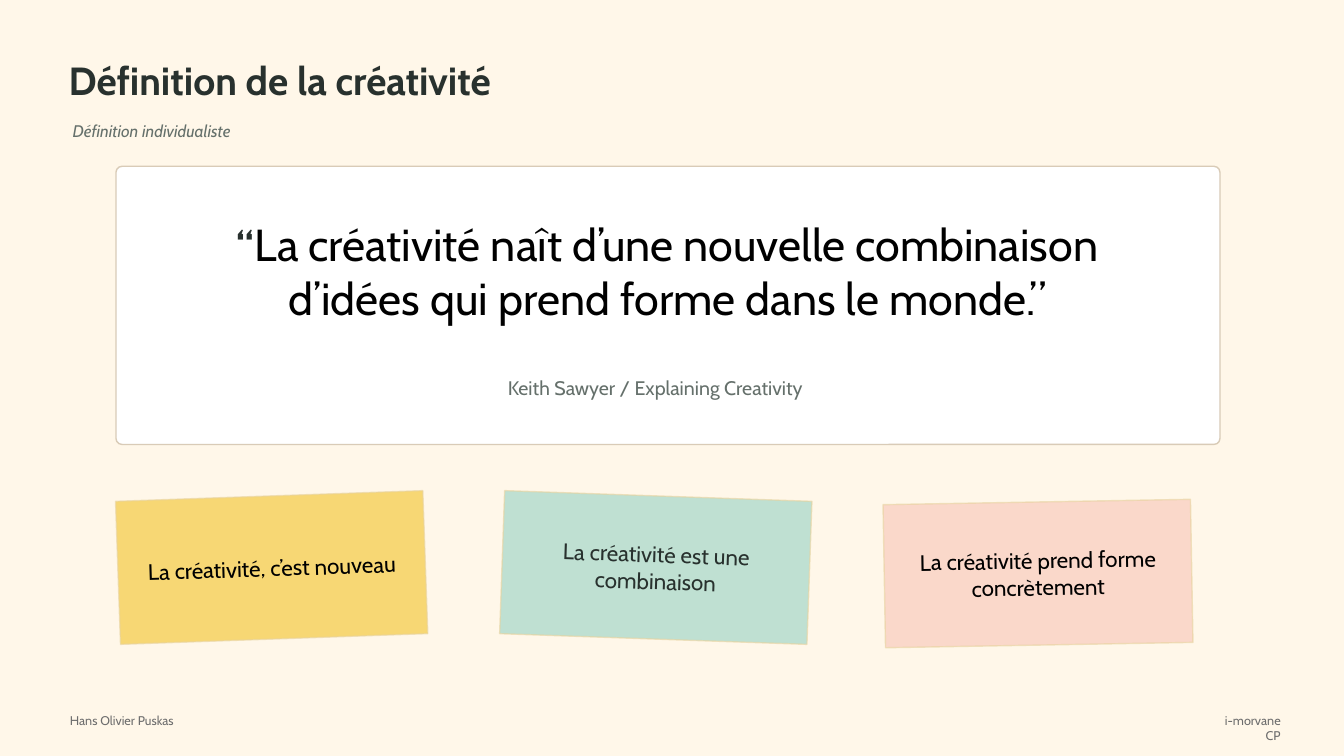
from dataclasses import dataclass

from lxml import etree
from pptx import Presentation
from pptx.dml.color import RGBColor
from pptx.enum.shapes import MSO_SHAPE
from pptx.enum.text import MSO_ANCHOR, MSO_AUTO_SIZE, PP_ALIGN
from pptx.oxml.ns import qn
from pptx.shapes.autoshape import Shape
from pptx.slide import Slide
from pptx.util import Inches, Pt

LEFT, CENTER, RIGHT = PP_ALIGN.LEFT, PP_ALIGN.CENTER, PP_ALIGN.RIGHT
MIDDLE = MSO_ANCHOR.MIDDLE
FIT = MSO_AUTO_SIZE.SHAPE_TO_FIT_TEXT
RECT, ROUND = MSO_SHAPE.RECTANGLE, MSO_SHAPE.ROUNDED_RECTANGLE


@dataclass(frozen=True)
class Theme:
    font: str = "Cabin"
    page: str = "FFF7E9"
    ink: str = "28312E"
    muted: str = "65706B"
    gray: str = "6E6E6E"
    black: str = "000000"
    white: str = "FFFFFF"
    border: str = "D7C9B4"
    edge: str = "E8D39F"
    yellow: str = "F7D774"
    green: str = "BFE0D2"
    pink: str = "FAD8CA"
    title: int = 28
    mark: int = 30
    quote: int = 32
    note: int = 16
    source: int = 14
    label: int = 12
    footer: int = 9


THEME = Theme()


@dataclass(frozen=True)
class Box:
    left: float
    top: float
    width: float
    height: float
    turn: float = 0

    def inset(self, side: float, edge: float) -> "Box":
        return Box(self.left + side, self.top + edge,
                   self.width - 2 * side, self.height - 2 * edge, self.turn)

    def args(self) -> list[int]:
        return [Inches(n) for n in (self.left, self.top, self.width, self.height)]


@dataclass(frozen=True)
class Span:
    text: str
    size: int
    color: str
    bold: bool = False
    italic: bool = False


@dataclass(frozen=True)
class Label:
    box: Box
    spans: tuple[Span, ...]
    align: PP_ALIGN = LEFT


@dataclass(frozen=True)
class Note:
    left: float
    top: float
    turn: float
    fill: str
    text: str
    color: str


TITLES = (
    Label(Box(0.68, 0.48, 7.75, 0.62),
          (Span("Définition de la créativité", THEME.title, THEME.ink, bold=True),)),
    Label(Box(0.72, 1.13, 7.3, 0.34),
          (Span("Définition individualiste", THEME.label, THEME.muted, italic=True),)),
)
CARD = Box(1.15, 1.65, 10.95, 2.76)
QUOTES = (
    Label(Box(1.85, 1.91, 9.55, 1.55),
          (Span("“", THEME.mark, THEME.ink, bold=True),
           Span("La créativité naît d’une nouvelle combinaison d’idées "
                "qui prend forme dans le monde.”", THEME.quote, THEME.black)),
          CENTER),
    Label(Box(4.14, 3.68, 4.72, 0.34),
          (Span("Keith Sawyer / Explaining Creativity", THEME.source, THEME.muted),),
          CENTER),
)
NOTES = (
    Note(1.17, 4.92, -2, THEME.yellow, "La créativité, c’est nouveau", THEME.black),
    Note(4.98, 4.92, 2, THEME.green, "La créativité est une combinaison", THEME.ink),
    Note(8.77, 4.98, -1, THEME.pink, "La créativité prend forme concrètement",
         THEME.black),
)
FOOTERS = (
    Label(Box(11.89, 7.02, 0.91, 0.25),
          (Span("i-morvane CP", THEME.footer, THEME.gray),), RIGHT),
    Label(Box(0.53, 7.02, 1.29, 0.25),
          (Span("Hans Olivier Puskas", THEME.footer, THEME.gray),), RIGHT),
)


def draw_panel(slide: Slide, kind: MSO_SHAPE, box: Box, fill: str,
               line: str, alpha: int) -> Shape:
    """Draw a filled panel whose outline has the given opacity in percent."""
    panel = slide.shapes.add_shape(kind, *box.args())
    panel.rotation = box.turn
    panel.shadow.inherit = False
    panel.fill.solid()
    panel.fill.fore_color.rgb = RGBColor.from_string(fill)
    panel.line.color.rgb = RGBColor.from_string(line)
    panel.line.width = Pt(1)
    color = panel.line._ln.find(f".//{qn('a:srgbClr')}")
    etree.SubElement(color, qn("a:alpha")).set("val", str(alpha * 1000))
    return panel


def draw_label(slide: Slide, label: Label) -> Shape:
    """Draw a line of styled spans in a plain text box."""
    shape = slide.shapes.add_textbox(*label.box.args())
    shape.rotation = label.box.turn
    para = shape.text_frame.paragraphs[0]
    para.alignment = label.align
    for span in label.spans:
        run = para.add_run()
        run.text = span.text
        font = run.font
        font.name = THEME.font
        font.size = Pt(span.size)
        font.bold = span.bold
        font.italic = span.italic
        font.color.rgb = RGBColor.from_string(span.color)
    return shape


def draw_block(slide: Slide, label: Label) -> None:
    """Draw a wrapped label with no margins, centred in its height."""
    frame = draw_label(slide, label).text_frame
    frame.word_wrap = True
    frame.vertical_anchor = MIDDLE
    frame.margin_left = frame.margin_right = 0
    frame.margin_top = frame.margin_bottom = 0


def draw_note(slide: Slide, note: Note) -> None:
    """Draw a tilted paper note with its text."""
    box = Box(note.left, note.top, 3.05, 1.42, note.turn)
    draw_panel(slide, RECT, box, note.fill, THEME.edge, 60)
    span = Span(note.text, THEME.note, note.color)
    draw_block(slide, Label(box.inset(0.15, 0.13), (span,), CENTER))


def draw_footer(slide: Slide, label: Label) -> None:
    """Draw a footer label that fits its text on one line."""
    frame = draw_label(slide, label).text_frame
    frame.word_wrap = False
    frame.auto_size = FIT


def main() -> None:
    """Build the slide and save it."""
    deck = Presentation()
    deck.slide_width, deck.slide_height = Inches(13.33), Inches(7.5)
    slide = deck.slides.add_slide(deck.slide_layouts[6])
    slide.background.fill.solid()
    slide.background.fill.fore_color.rgb = RGBColor.from_string(THEME.page)
    for label in TITLES:
        draw_block(slide, label)
    card = draw_panel(slide, ROUND, CARD, THEME.white, THEME.border, 95)
    card.adjustments[0] = 0.022
    for label in QUOTES:
        draw_block(slide, label)
    for note in NOTES:
        draw_note(slide, note)
    for label in FOOTERS:
        draw_footer(slide, label)
    deck.save("out.pptx")


if __name__ == "__main__":
    main()
